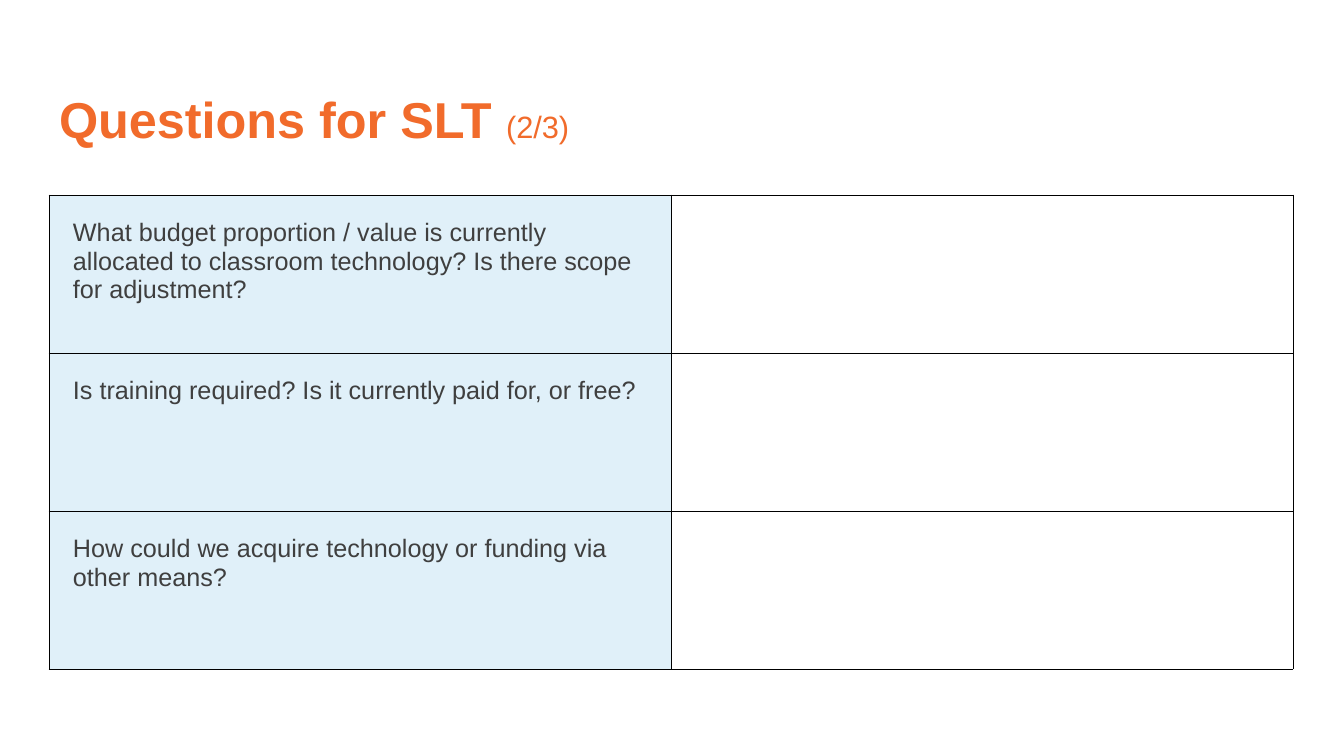
from lxml.etree import SubElement
from pptx import Presentation
from pptx.dml.color import RGBColor
from pptx.enum.text import MSO_ANCHOR, PP_ALIGN
from pptx.oxml.ns import qn
from pptx.util import Pt

PIXELS_PER_INCH = 100.8
COLORS = {
    "heading": "F16B2B",
    "text": "3F3F3F",
    "question": "E0F0F9",
    "answer": "FFFFFF",
    "border": "000000",
}
QUESTIONS = [
    "What budget proportion / value is currently allocated to classroom "
    "technology? Is there scope for adjustment?",
    "Is training required? Is it currently paid for, or free?",
    "How could we acquire technology or funding via other means?",
]


def px(length):
    return round(length * 914400 / PIXELS_PER_INCH)


def set_all(target, values):
    for name, value in values.items():
        setattr(target, name, value)


def add_span(para, text, size, color, bold=False):
    span = para.add_run()
    span.text = text
    set_all(span.font, {"name": "Arial", "size": Pt(size), "bold": bold})
    span.font.color.rgb = RGBColor.from_string(COLORS[color])


def fill_cell(cell, color):
    """Draw the four borders, then the background, as the schema orders them."""
    properties = cell._tc.get_or_add_tcPr()
    for side in ("a:lnL", "a:lnR", "a:lnT", "a:lnB"):
        line = SubElement(properties, qn(side), w=str(Pt(0.75)))
        line_fill = SubElement(line, qn("a:solidFill"))
        SubElement(line_fill, qn("a:srgbClr"), val=COLORS["border"])
    cell.fill.solid()
    cell.fill.fore_color.rgb = RGBColor.from_string(COLORS[color])


def add_heading(page, left, top, width, height):
    title = page.shapes.title
    set_all(title, {"left": px(left), "top": px(top),
                    "width": px(width), "height": px(height)})
    frame = title.text_frame
    set_all(frame, {"vertical_anchor": MSO_ANCHOR.MIDDLE, "word_wrap": True,
                    "margin_left": px(10), "margin_right": px(10),
                    "margin_top": px(5), "margin_bottom": px(5)})
    para = frame.paragraphs[0]
    set_all(para, {"alignment": PP_ALIGN.LEFT, "line_spacing": 0.9})
    add_span(para, "Questions for SLT ", 36, "heading", bold=True)
    add_span(para, "(2/3)", 22, "heading")


def add_question_table(page, left, top, width, height):
    table = page.shapes.add_table(len(QUESTIONS), 2, px(left), px(top),
                                  px(width), px(height)).table
    set_all(table, {"first_row": False, "horz_banding": False})
    for row, question in zip(table.rows, QUESTIONS):
        question_cell, answer_cell = row.cells
        fill_cell(question_cell, "question")
        fill_cell(answer_cell, "answer")
        set_all(question_cell, {f"margin_{side}": px(24) for side in
                                ("left", "right", "top", "bottom")})
        add_span(question_cell.text_frame.paragraphs[0], question, 18, "text")


def main():
    deck = Presentation()
    set_all(deck, {"slide_width": px(1344), "slide_height": px(756)})
    page = deck.slides.add_slide(deck.slide_layouts[5])
    add_heading(page, 49, 49, 1159, 146)
    add_question_table(page, 49, 195, 1244, 474)
    deck.save("out.pptx")


if __name__ == "__main__":
    main()
